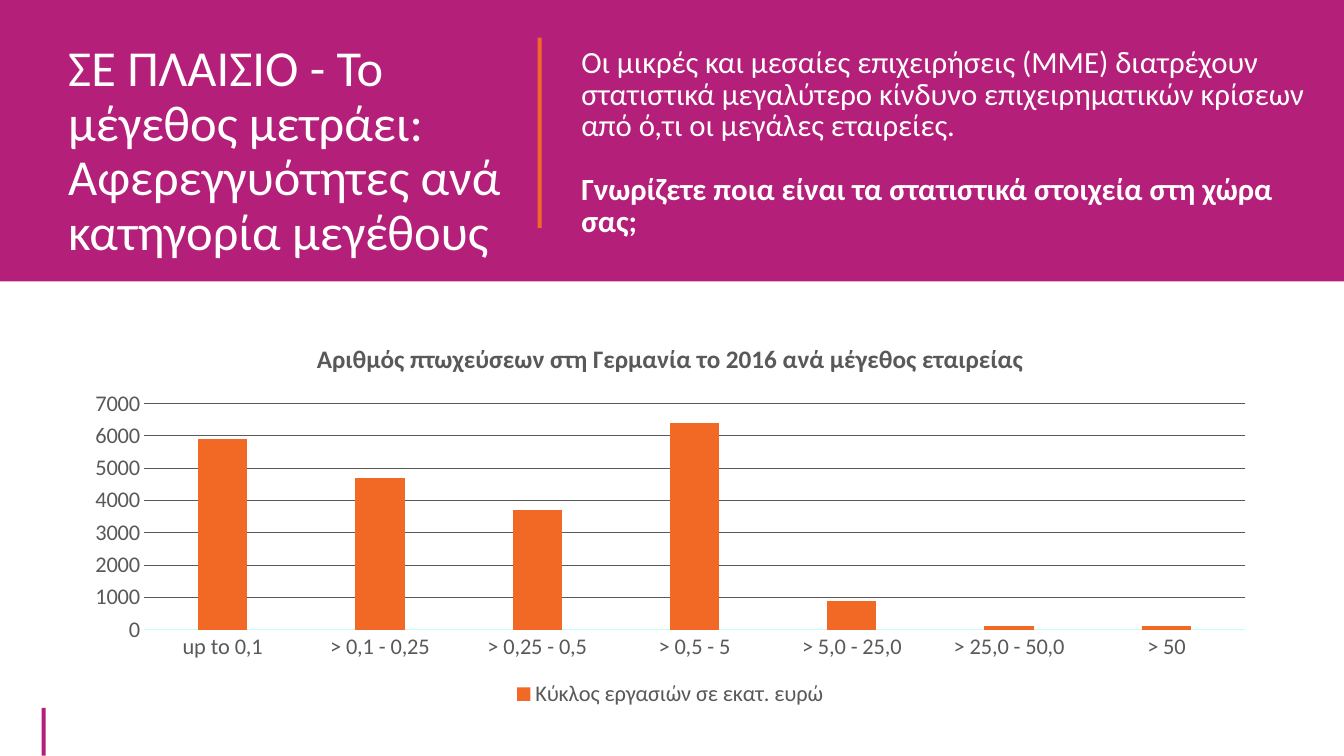
from pptx import Presentation
from pptx.chart.data import CategoryChartData
from pptx.dml.color import RGBColor
from pptx.enum import chart as ch, shapes
from pptx.util import Cm, Pt

FONT = "Calibri"
MAGENTA, ORANGE, WHITE, GREY = "B41F7A", "F16924", "FFFFFF", "595959"

INSOLVENCIES = {
    "up to 0,1": 5900,
    "> 0,1 - 0,25": 4700,
    "> 0,25 - 0,5": 3700,
    "> 0,5 - 5": 6400,
    "> 5,0 - 25,0": 900,
    "> 25,0 - 50,0": 100,
    "> 50": 100,
}


def colour(hex_code):
    return RGBColor.from_string(hex_code)


def style_font(font, size, hex_code, bold=False):
    font.name, font.size, font.bold = FONT, Pt(size), bold
    font.color.rgb = colour(hex_code)


def add_block(slide, left, top, width, height, fill):
    block = slide.shapes.add_shape(
        shapes.MSO_SHAPE.RECTANGLE, Cm(left), Cm(top), Cm(width), Cm(height))
    block.shadow.inherit = False
    block.fill.solid()
    block.fill.fore_color.rgb = colour(fill)
    block.line.fill.background()


def add_text_frame(slide, left, top, width, height):
    frame = slide.shapes.add_textbox(
        Cm(left), Cm(top), Cm(width), Cm(height)).text_frame
    frame.word_wrap = True
    return frame


def write(paragraph, words, size=22, hex_code=WHITE, bold=False,
          spacing=None, before=0):
    run = paragraph.add_run()
    run.text = words
    style_font(run.font, size, hex_code, bold)
    paragraph.line_spacing = spacing
    paragraph.space_before = Pt(before)


def add_insolvency_chart(slide, left, top, width, height):
    data = CategoryChartData()
    data.categories = list(INSOLVENCIES)
    data.add_series("Κύκλος εργασιών σε εκατ. ευρώ", list(INSOLVENCIES.values()))
    chart = slide.shapes.add_chart(
        ch.XL_CHART_TYPE.COLUMN_CLUSTERED,
        Cm(left), Cm(top), Cm(width), Cm(height), data).chart
    style_font(chart.font, 16, GREY)

    # Heading and legend
    chart.has_title = True
    write(chart.chart_title.text_frame.paragraphs[0],
          "Αριθμός πτωχεύσεων στη Γερμανία το 2016 ανά μέγεθος εταιρείας",
          size=18, hex_code=GREY, bold=True)
    chart.chart_title.include_in_layout = False
    chart.has_legend = True
    chart.legend.position = ch.XL_LEGEND_POSITION.BOTTOM
    chart.legend.include_in_layout = False
    style_font(chart.legend.font, 16, GREY)

    # Columns
    columns = chart.plots[0]
    columns.gap_width, columns.overlap = 219, -27
    columns.vary_by_categories = False
    turnover = columns.series[0]
    turnover.format.fill.solid()
    turnover.format.fill.fore_color.rgb = colour(ORANGE)

    # Axes
    sizes, counts = chart.category_axis, chart.value_axis
    for axis in (sizes, counts):
        axis.major_tick_mark = axis.minor_tick_mark = ch.XL_TICK_MARK.NONE
        style_font(axis.tick_labels.font, 16, GREY)
    counts.minimum_scale, counts.maximum_scale, counts.major_unit = 0, 7000, 1000
    counts.has_major_gridlines = True
    counts.format.line.fill.background()
    for line, shade in ((sizes.format.line, "C8FBFB"),
                        (counts.major_gridlines.format.line, GREY)):
        line.color.rgb = colour(shade)
        line.width = Pt(0.75)


def main():
    deck = Presentation()
    deck.slide_width, deck.slide_height = Cm(33.87), Cm(19.05)
    slide = deck.slides.add_slide(deck.slide_layouts[6])

    # Footer accent, header band and its divider
    add_block(slide, 1.05, 17.84, 0.1, 1.2, MAGENTA)
    add_block(slide, 0, 0, 33.87, 7.09, MAGENTA)
    add_block(slide, 13.55, 0.95, 0.1, 4.8, ORANGE)

    # Header texts
    heading = add_text_frame(slide, 1.47, 0.97, 11.89, 5.8)
    write(heading.paragraphs[0],
          "ΣΕ ΠΛΑΙΣΙΟ - Το μέγεθος μετράει: Αφερεγγυότητες ανά κατηγορία μεγέθους",
          size=36, spacing=0.9)
    intro = add_text_frame(slide, 14.4, 1.07, 19.28, 5.8)
    write(intro.paragraphs[0],
          "Οι μικρές και μεσαίες επιχειρήσεις (ΜΜΕ) διατρέχουν στατιστικά "
          "μεγαλύτερο κίνδυνο επιχειρηματικών κρίσεων από ό,τι οι μεγάλες εταιρείες.",
          spacing=Pt(22.8))
    write(intro.add_paragraph(),
          "Γνωρίζετε ποια είναι τα στατιστικά στοιχεία στη χώρα σας;",
          bold=True, spacing=Pt(22.8), before=22.8)

    # Insolvencies by company size
    add_insolvency_chart(slide, 1.8, 8.15, 30.18, 9.8)

    deck.save("out.pptx")


if __name__ == "__main__":
    main()
